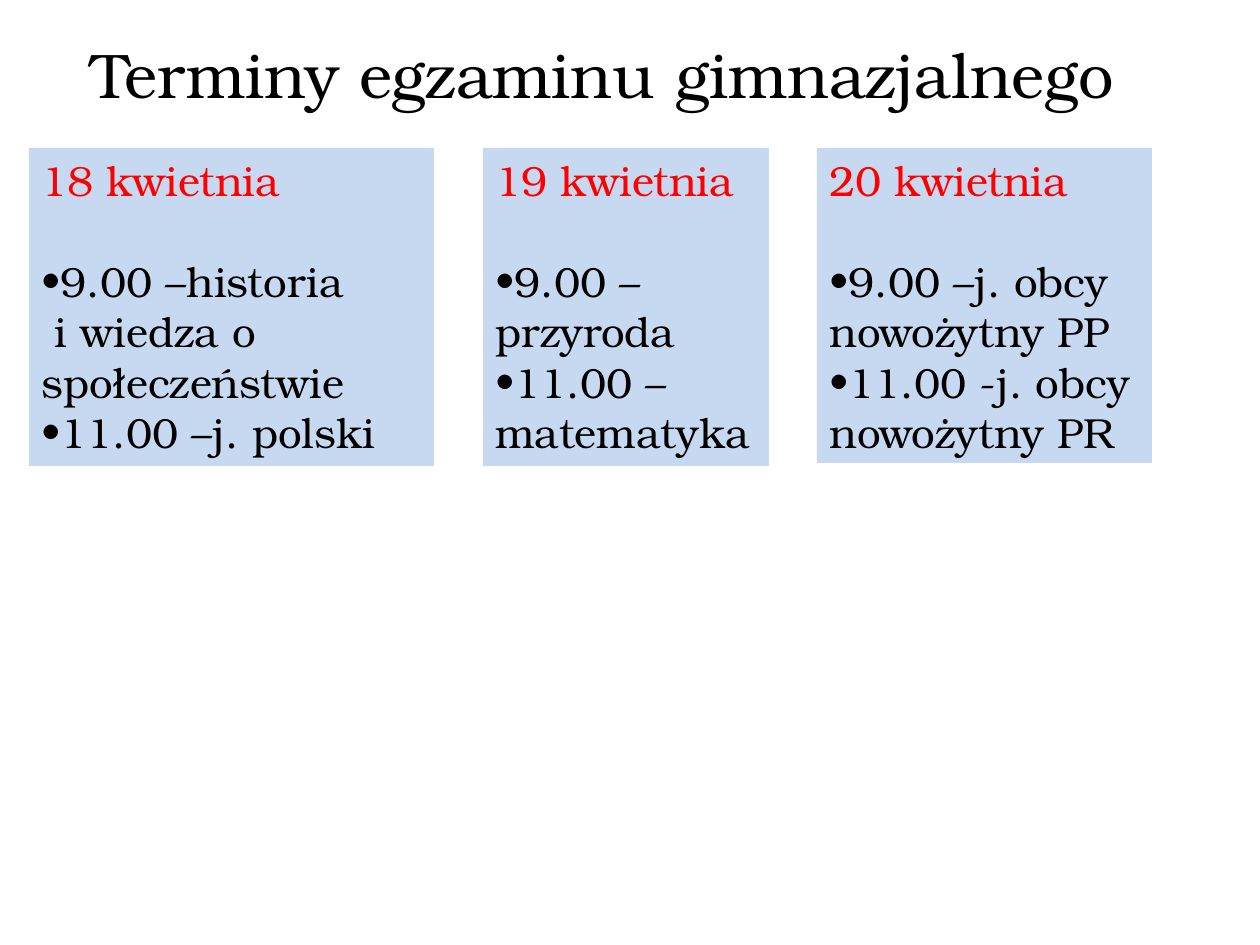
from pptx import Presentation
from pptx.dml.color import RGBColor
from pptx.enum.shapes import MSO_SHAPE
from pptx.enum.text import MSO_ANCHOR, MSO_AUTO_SIZE as AutoSize, PP_ALIGN
from pptx.oxml.ns import qn
from pptx.util import Pt
from lxml.etree import SubElement

PX = 914400 // 126
FONT = "TeX Gyre Bonum"
BLACK = RGBColor(0x00, 0x00, 0x00)
RED = RGBColor(0xFF, 0x00, 0x00)
LIGHT_BLUE = RGBColor(0xC6, 0xD9, 0xF1)
FRAME_FORMAT = {
    "word_wrap": True,
    "vertical_anchor": MSO_ANCHOR.TOP,
    "auto_size": AutoSize.SHAPE_TO_FIT_TEXT,
}


def apply_format(target, values):
    for key, value in values.items():
        setattr(target, key, value)


def write_line(paragraph, text, size, color):
    paragraph.text = text
    paragraph.alignment = PP_ALIGN.LEFT
    for run in paragraph.runs:
        apply_format(run.font, {"name": FONT, "size": Pt(size)})
        run.font.color.rgb = color


deck = Presentation()
apply_format(deck, {"slide_width": 1260 * PX, "slide_height": 945 * PX})
slide = deck.slides.add_slide(deck.slide_layouts[5])

heading = slide.shapes.title
apply_format(heading, {"left": 78 * PX, "top": 29 * PX, "width": 1074 * PX, "height": 89 * PX})
apply_format(heading.text_frame, FRAME_FORMAT)
write_line(heading.text_frame.paragraphs[0], "Terminy egzaminu gimnazjalnego", 36, BLACK)

exam_days = [
    (29, 405, 318, "18 kwietnia",
     ["9.00 –historia\v i wiedza o społeczeństwie", "11.00 –j. polski"]),
    (483, 286, 318, "19 kwietnia",
     ["9.00 –przyroda", "11.00 –matematyka"]),
    (817, 335, 315, "20 kwietnia",
     ["9.00 –j. obcy nowożytny PP", "11.00 -j. obcy nowożytny PR"]),
]

for left, width, height, date, exams in exam_days:
    day = slide.shapes.add_shape(
        MSO_SHAPE.RECTANGLE, left * PX, 148 * PX, width * PX, height * PX)
    day.shadow.inherit = False
    day.fill.solid()
    day.fill.fore_color.rgb = LIGHT_BLUE
    day.line.fill.background()
    apply_format(day.text_frame, FRAME_FORMAT)

    date_line = day.text_frame.paragraphs[0]
    write_line(date_line, date, 24, RED)
    date_line.space_after = Pt(29)

    for exam in exams:
        exam_line = day.text_frame.add_paragraph()
        write_line(exam_line, exam, 24, BLACK)
        bullet_props = exam_line._p.get_or_add_pPr()
        bullet_props.set("marL", "0")
        bullet_props.set("indent", "0")
        SubElement(bullet_props, qn("a:buFont"), typeface=FONT)
        SubElement(bullet_props, qn("a:buChar"), char="•")

deck.save("out.pptx")
